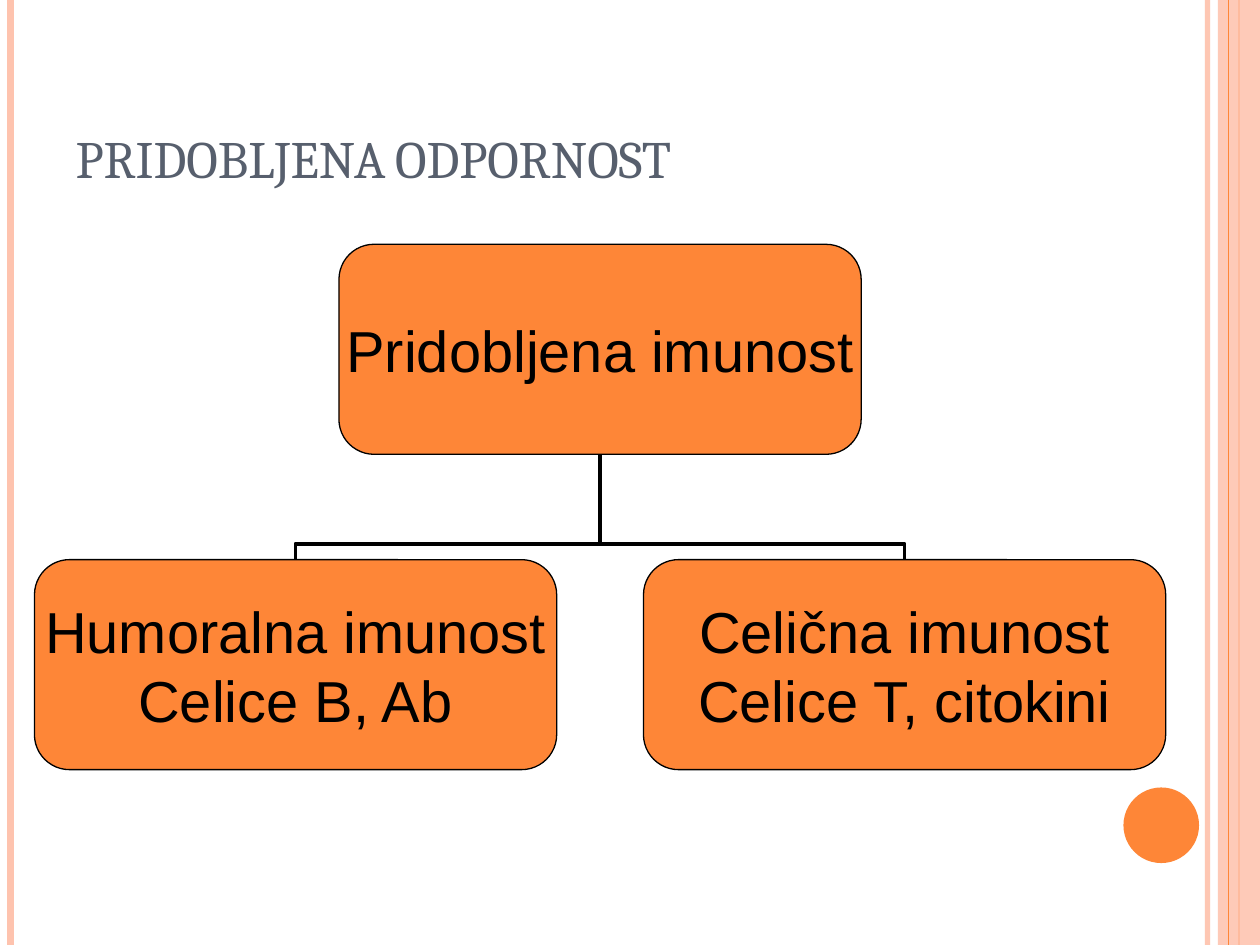
from lxml import etree
from pptx import Presentation
from pptx.dml.color import RGBColor
from pptx.enum.shapes import MSO_CONNECTOR, MSO_SHAPE
from pptx.enum.text import MSO_ANCHOR, PP_ALIGN
from pptx.oxml.ns import qn
from pptx.util import Pt

LINE, ELBOW = MSO_CONNECTOR.STRAIGHT, MSO_CONNECTOR.ELBOW
RECT, ROUND, OVAL = MSO_SHAPE.RECTANGLE, MSO_SHAPE.ROUNDED_RECTANGLE, MSO_SHAPE.OVAL
MID, BOTTOM = MSO_ANCHOR.MIDDLE, MSO_ANCHOR.BOTTOM
LEFT, CENTER = PP_ALIGN.LEFT, PP_ALIGN.CENTER

WIDE, HIGH = 720, 540
ORANGE, PINK, SLATE, BLACK = "FE8637", "FEC3AE", "575F6D", "000000"
TITLE = "PRIDOBLJENA ODPORNOST"
ROOT = "Pridobljena imunost"
KIDS = ["Humoralna imunost\nCelice B, Ab", "Celična imunost\nCelice T, citokini"]
BARS = [(690, PINK, 3, 93), (6, PINK, 4.5, 100), (708, ORANGE, 1.5, 100)]
EDGE = (702, ORANGE, 0.75, 100)
BOX_W, BOX_H, MID_X, STEP = 298.4, 120, 342.9, 348
ROOT_Y, KID_Y = 139.6, 319.8
FRAME = dict(margin_left=0, margin_right=0, margin_top=0, margin_bottom=0,
             word_wrap=False, vertical_anchor=MID)


def put(obj, **vals):
    """Set each named attribute on an object."""
    for key, val in vals.items():
        setattr(obj, key, val)


def paint(fill, hue, alpha=100):
    """Give a fill a solid colour and an opacity in percent."""
    fill.solid()
    fill.fore_color.rgb = RGBColor.from_string(hue)
    if alpha < 100:
        tone = fill._xPr.find(".//" + qn("a:srgbClr"))
        etree.SubElement(tone, qn("a:alpha"), val=str(alpha * 1000))


def join(kind, ends, hue, size, alpha=100):
    """Draw a connector between two points without a shadow."""
    link = slide.shapes.add_connector(kind, *map(Pt, ends))
    link.line.width = Pt(size)
    paint(link.line.fill, hue, alpha)
    etree.SubElement(link._element.spPr, qn("a:effectLst"))
    return link


def bar(x, hue, size, alpha):
    """Draw a full-height line."""
    join(LINE, (x, 0, x, HIGH), hue, size, alpha)


def shape(kind, at, hue, alpha=100):
    """Draw a filled shape with no outline or shadow."""
    form = slide.shapes.add_shape(kind, *map(Pt, at))
    form.shadow.inherit = False
    paint(form.fill, hue, alpha)
    form.line.fill.background()
    return form


def write(frame, text, face, size, hue, align):
    """Write text in one font, a paragraph for each line."""
    frame.text = text
    for par in frame.paragraphs:
        par.alignment = align
        for run in par.runs:
            put(run.font, name=face, size=Pt(size))
            run.font.color.rgb = RGBColor.from_string(hue)


def box(mid, top, text):
    """Draw a rounded box centred on mid."""
    form = shape(ROUND, (mid - BOX_W / 2, top, BOX_W, BOX_H), ORANGE)
    form.adjustments[0] = 0.167
    form.line.width = Pt(0.75)
    paint(form.line.fill, BLACK)
    put(form.text_frame, **FRAME)
    write(form.text_frame, text, "Arial", 33, BLACK, CENTER)


def branch(mid):
    """Link a lower box to the root with a turned elbow."""
    foot = ROOT_Y + BOX_H
    x, y = (mid + MID_X) / 2, (KID_Y + foot) / 2
    side = 1 if mid > MID_X else -1
    half, reach = side * (KID_Y - foot) / 2, abs(mid - MID_X) / 2
    link = join(ELBOW, (x + half, y - reach, x - half, y + reach), BLACK, 2.25)
    spot = link._element.spPr
    spot.find(qn("a:xfrm")).set("rot", str((180 - 90 * side) * 60000))
    etree.SubElement(spot.find(".//" + qn("a:avLst")), qn("a:gd"),
                     name="adj1", fmla="val 15000")


deck = Presentation()
put(deck, slide_width=Pt(WIDE), slide_height=Pt(HIGH))
slide = deck.slides.add_slide(deck.slide_layouts[5])

for item in BARS:
    bar(*item)
shape(RECT, (696, 0, 24, HIGH), PINK, 87)
bar(*EDGE)
shape(OVAL, (642, 450, 43.2, 43.2), ORANGE)

title = slide.shapes.title
put(title, left=Pt(36), top=Pt(21.6), width=Pt(588), height=Pt(90))
title.text_frame.vertical_anchor = BOTTOM
write(title.text_frame, TITLE, "Cambria", 30, SLATE, LEFT)
title.text_frame.paragraphs[0].runs[0].font._element.set("cap", "small")

spots = [MID_X + side * STEP / 2 for side in (-1, 1)]
for mid in reversed(spots):
    branch(mid)
box(MID_X, ROOT_Y, ROOT)
for mid, text in zip(spots, KIDS):
    box(mid, KID_Y, text)

deck.save("out.pptx")
